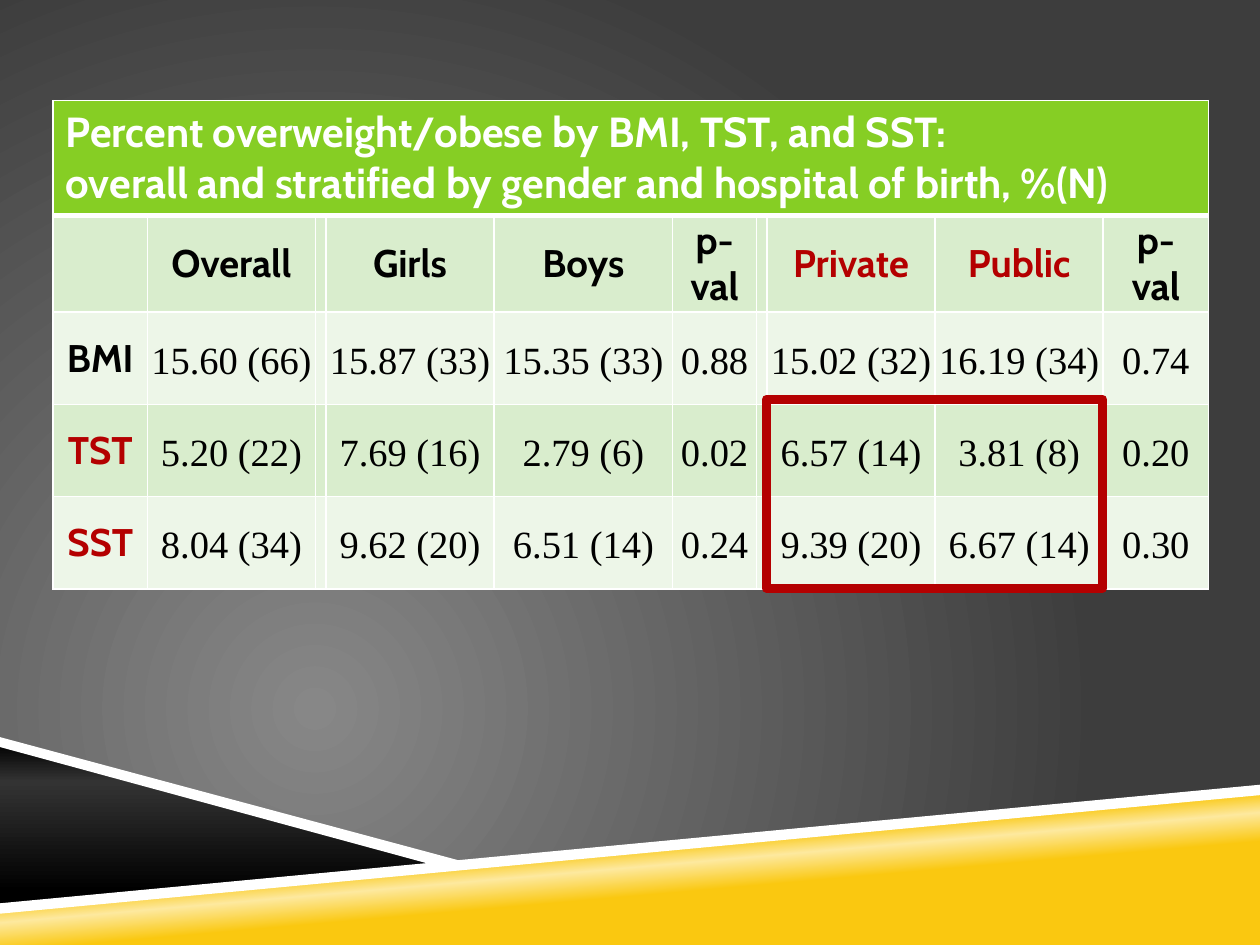
from dataclasses import dataclass

from lxml.etree import SubElement
from pptx import Presentation
from pptx.dml.color import RGBColor
from pptx.enum.shapes import MSO_SHAPE as Shape
from pptx.enum.text import MSO_ANCHOR as Anchor, PP_ALIGN as Align
from pptx.oxml.ns import qn
from pptx.util import Cm, Pt


@dataclass(frozen=True)
class Theme:
    white: str = "FFFFFF"
    black: str = "000000"
    charcoal: str = "333333"
    backdrop_light: str = "878787"
    backdrop_dark: str = "3D3D3D"
    yellow: str = "FAC810"
    pale_yellow: str = "FDE99F"
    green: str = "86CE24"
    band_dark: str = "D9EDCD"
    band_light: str = "EDF6E8"
    red: str = "B40000"
    label_font: str = "Cabin"
    number_font: str = "Times New Roman"
    title_size: int = 24
    body_size: int = 22
    number_spacing: float = 1.15
    border: int = 1
    title_border: int = 3
    frame: int = 5


def set_gradient(owner, fill, stops, angle=None):
    """Fill with (percent, colour) stops: linear with an angle, else circular."""
    fill.gradient()
    gradient = next(owner.element.iter(qn("a:gradFill")))
    for child in list(gradient):
        gradient.remove(child)
    stop_list = SubElement(gradient, qn("a:gsLst"))
    for percent, colour in stops:
        stop = SubElement(stop_list, qn("a:gs"), pos=str(percent * 1000))
        SubElement(stop, qn("a:srgbClr"), val=colour)
    if angle is not None:
        SubElement(gradient, qn("a:lin"), ang=str(angle * 60000), scaled="0")
        return
    circle = SubElement(gradient, qn("a:path"), path="circle")
    SubElement(circle, qn("a:fillToRect"), l="50000", t="100000", r="100000", b="50000")


def set_borders(cell, colour, **widths):
    """Draw the cell edges, named L, R, T and B, with widths in points."""
    properties = cell._tc.get_or_add_tcPr()
    for index, side in enumerate("LRTB"):
        line = SubElement(properties, qn(f"a:ln{side}"), w=str(Pt(widths[side])))
        solid = SubElement(line, qn("a:solidFill"))
        SubElement(solid, qn("a:srgbClr"), val=colour)
        properties.insert(index, line)


class SlideBuilder:
    def __init__(self, page, theme):
        self.page = page
        self.theme = theme

    def backdrop(self):
        theme = self.theme
        stops = [(0, theme.backdrop_light), (100, theme.backdrop_dark)]
        set_gradient(self.page, self.page.background.fill, stops)

    def polygon(self, points, colour=None, stops=None, angle=None):
        corners = [(Cm(x), Cm(y)) for x, y in points]
        builder = self.page.shapes.build_freeform(*corners[0])
        builder.add_line_segments(corners[1:], close=True)
        shape = builder.convert_to_shape()
        shape.shadow.inherit = False
        shape.line.fill.background()
        if stops:
            set_gradient(shape, shape.fill, stops, angle)
        else:
            shape.fill.solid()
            shape.fill.fore_color.rgb = RGBColor.from_string(colour)

    def frame(self, left, top, width, height):
        box = self.page.shapes.add_shape(
            Shape.RECTANGLE, Cm(left), Cm(top), Cm(width), Cm(height))
        box.shadow.inherit = False
        box.fill.background()
        box.line.color.rgb = RGBColor.from_string(self.theme.red)
        box.line.width = Pt(self.theme.frame)

    def table(self, left, top, widths, heights):
        table = self.page.shapes.add_table(
            len(heights), len(widths), Cm(left), Cm(top),
            Cm(sum(widths)), Cm(sum(heights))).table
        for column, width in zip(table.columns, widths):
            column.width = Cm(width)
        for row, height in zip(table.rows, heights):
            row.height = Cm(height)
        return table

    def text(self, cell, lines, size, colour, font, bold, align, spacing=None):
        for index, line in enumerate(lines):
            frame = cell.text_frame
            para = frame.add_paragraph() if index else frame.paragraphs[0]
            para.alignment = align
            if spacing:
                para.line_spacing = spacing
            span = para.add_run()
            span.text = line
            span.font.size = Pt(size)
            span.font.name = font
            span.font.bold = bold
            span.font.color.rgb = RGBColor.from_string(colour)

    def cell_style(self, cell, fill, top=None, bottom=None):
        theme = self.theme
        cell.fill.solid()
        cell.fill.fore_color.rgb = RGBColor.from_string(fill)
        set_borders(cell, theme.white, L=theme.border, R=theme.border,
                    T=top or theme.border, B=bottom or theme.border)

    def title_row(self, table, lines):
        theme = self.theme
        cells = list(table.rows[0].cells)
        cells[0].merge(cells[-1])
        for cell in cells:
            self.cell_style(cell, theme.green, bottom=theme.title_border)
        self.text(cells[0], lines, theme.title_size, theme.white,
                  theme.label_font, True, Align.LEFT)

    def body_cell(self, cell, value, fill, is_label, is_red, top=None):
        theme = self.theme
        self.cell_style(cell, fill, top=top)
        cell.vertical_anchor = Anchor.MIDDLE
        cell.margin_left = cell.margin_right = cell.margin_top = cell.margin_bottom = 0
        if value:
            self.text(cell, value.split("\n"), theme.body_size,
                      theme.red if is_red else theme.black,
                      theme.label_font if is_label else theme.number_font,
                      is_label, Align.CENTER,
                      None if is_label else theme.number_spacing)


TITLE = ["Percent overweight/obese by BMI, TST, and SST:",
         "overall and stratified by gender and hospital of birth, %(N)"]
ROWS = [
    ["", "Overall", "", "Girls", "Boys", "p-\nval", "", "Private", "Public", "p-\nval"],
    ["BMI", "15.60 (66)", "", "15.87 (33)", "15.35 (33)", "0.88",
     "", "15.02 (32)", "16.19 (34)", "0.74"],
    ["TST", "5.20 (22)", "", "7.69 (16)", "2.79 (6)", "0.02",
     "", "6.57 (14)", "3.81 (8)", "0.20"],
    ["SST", "8.04 (34)", "", "9.62 (20)", "6.51 (14)", "0.24",
     "", "9.39 (20)", "6.67 (14)", "0.30"],
]
RED_LABELS = {"Private", "Public", "TST", "SST"}
COLUMN_WIDTHS = [1.9, 3.39, 0.21, 3.39, 3.6, 1.69, 0.21, 3.39, 3.39, 2.12]
ROW_HEIGHTS = [2.14, 1.95, 1.86, 1.86, 1.86]


def draw_landscape(builder):
    theme = builder.theme
    builder.backdrop()
    builder.polygon([(0, 18.31), (25.4, 15.93), (25.4, 19.05), (0, 19.05)],
                    stops=[(39, theme.yellow), (50, theme.pale_yellow),
                           (58, theme.yellow)], angle=265)
    builder.polygon([(0, 14.96), (9.12, 17.4), (0, 18.31)],
                    stops=[(0, theme.black), (24, theme.charcoal),
                           (90, theme.black)], angle=90)
    builder.polygon([(25.4, 15.82), (0, 18.21), (0, 18.42), (25.4, 16.03)], theme.white)
    builder.polygon([(0, 14.86), (0, 15.06), (8.89, 17.48), (9.53, 17.42)], theme.white)


def draw_results(builder):
    theme = builder.theme
    table = builder.table(1.07, 2.03, COLUMN_WIDTHS, ROW_HEIGHTS)
    builder.title_row(table, TITLE)
    for row, values in enumerate(ROWS, start=1):
        fill = theme.band_dark if row % 2 else theme.band_light
        top = theme.title_border if row == 1 else None
        for column, value in enumerate(values):
            is_label = row == 1 or column == 0
            builder.body_cell(table.cell(row, column), value, fill,
                              is_label, value in RED_LABELS, top)
    builder.frame(15.45, 8.05, 6.78, 3.81)


def main():
    deck = Presentation()
    deck.slide_width, deck.slide_height = Cm(25.4), Cm(19.05)
    builder = SlideBuilder(deck.slides.add_slide(deck.slide_layouts[6]), Theme())
    draw_landscape(builder)
    draw_results(builder)
    deck.save("out.pptx")


if __name__ == "__main__":
    main()
